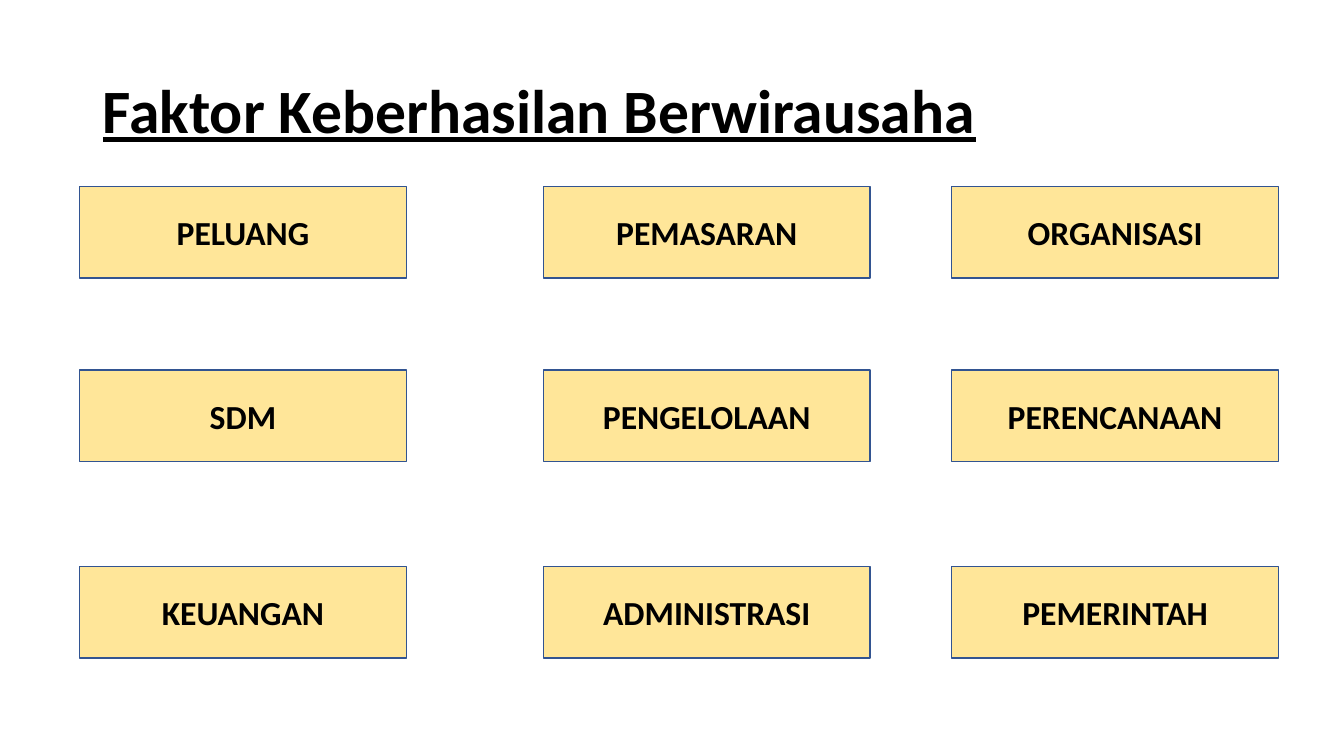
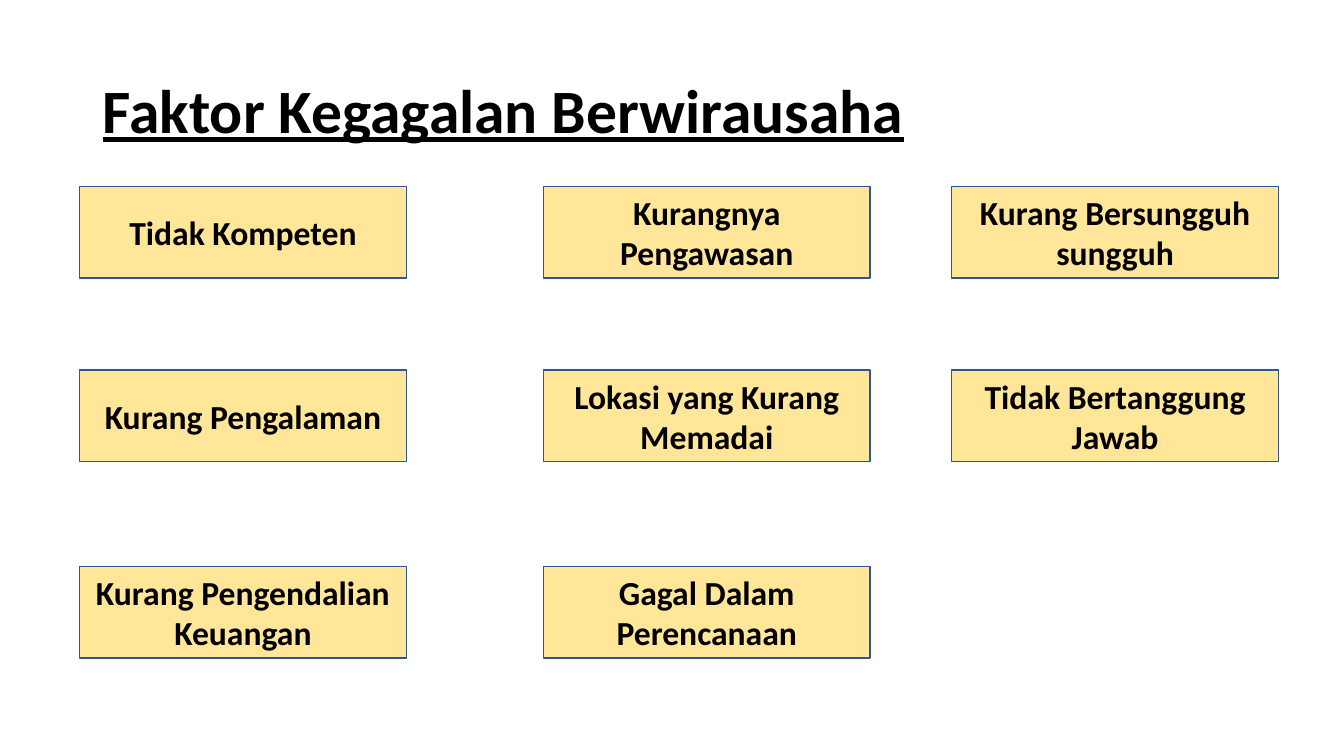
from pptx import Presentation
from pptx import util as u
from pptx.dml.color import RGBColor
from pptx.enum import shapes, text

# Content: each slide has a title and columns of factors, read downwards
SLIDES = [
    ("Faktor Keberhasilan Berwirausaha", [
        ["PELUANG", "SDM", "KEUANGAN"],
        ["PEMASARAN", "PENGELOLAAN", "ADMINISTRASI"],
        ["ORGANISASI", "PERENCANAAN", "PEMERINTAH"],
    ]),
    ("Faktor Kegagalan Berwirausaha", [
        ["Tidak Kompeten", "Kurang Pengalaman", "Kurang Pengendalian Keuangan"],
        ["Kurangnya Pengawasan", "Lokasi yang Kurang Memadai",
         "Gagal Dalam Perencanaan"],
        ["Kurang Bersungguh sungguh", "Tidak Bertanggung Jawab"],
    ]),
]

# Shared look
BLACK = RGBColor(0x00, 0x00, 0x00)
CREAM = RGBColor(0xFF, 0xE6, 0x99)
BLUE = RGBColor(0x32, 0x54, 0x91)
BASE_FONT = {"name": "Calibri", "bold": True}
TITLE_FONT = {**BASE_FONT, "size": u.Pt(44), "underline": True}
BOX_FONT = {**BASE_FONT, "size": u.Pt(24)}

# Geometry in px, 100 to the inch
PX = u.Inches(1) // 100
PAGE_SIZE = (1333, 750)
TITLE_AREA = (92, 40, 1150, 145)
COLUMN_LEFTS = (79, 539, 944)
ROW_TOPS = (185, 367, 562)
BOX_SIZE = (324, 91)


def emu(*lengths):
    return [length * PX for length in lengths]


def write(frame, words, font, align, spacing):
    frame.word_wrap = True
    frame.vertical_anchor = text.MSO_ANCHOR.MIDDLE
    para = frame.paragraphs[0]
    para.alignment = align
    para.line_spacing = spacing
    span = para.add_run()
    span.text = words
    for name, value in font.items():
        setattr(span.font, name, value)
    span.font.color.rgb = BLACK


def add_title(page, words):
    title = page.shapes.title
    title.left, title.top, title.width, title.height = emu(*TITLE_AREA)
    write(title.text_frame, words, TITLE_FONT, text.PP_ALIGN.LEFT, 0.9)


def add_box(page, left, top, words):
    box = page.shapes.add_shape(shapes.MSO_SHAPE.RECTANGLE,
                                *emu(left, top, *BOX_SIZE))
    box.shadow.inherit = False
    box.fill.solid()
    box.fill.fore_color.rgb = CREAM
    box.line.color.rgb = BLUE
    box.line.width = u.Pt(1)
    write(box.text_frame, words, BOX_FONT, text.PP_ALIGN.CENTER, 1.0)


def main():
    deck = Presentation()
    deck.slide_width, deck.slide_height = emu(*PAGE_SIZE)
    title_only = deck.slide_layouts[5]
    for title, columns in SLIDES:
        page = deck.slides.add_slide(title_only)
        add_title(page, title)
        for left, factors in zip(COLUMN_LEFTS, columns):
            for top, factor in zip(ROW_TOPS, factors):
                add_box(page, left, top, factor)
    deck.save("out.pptx")


if __name__ == "__main__":
    main()
